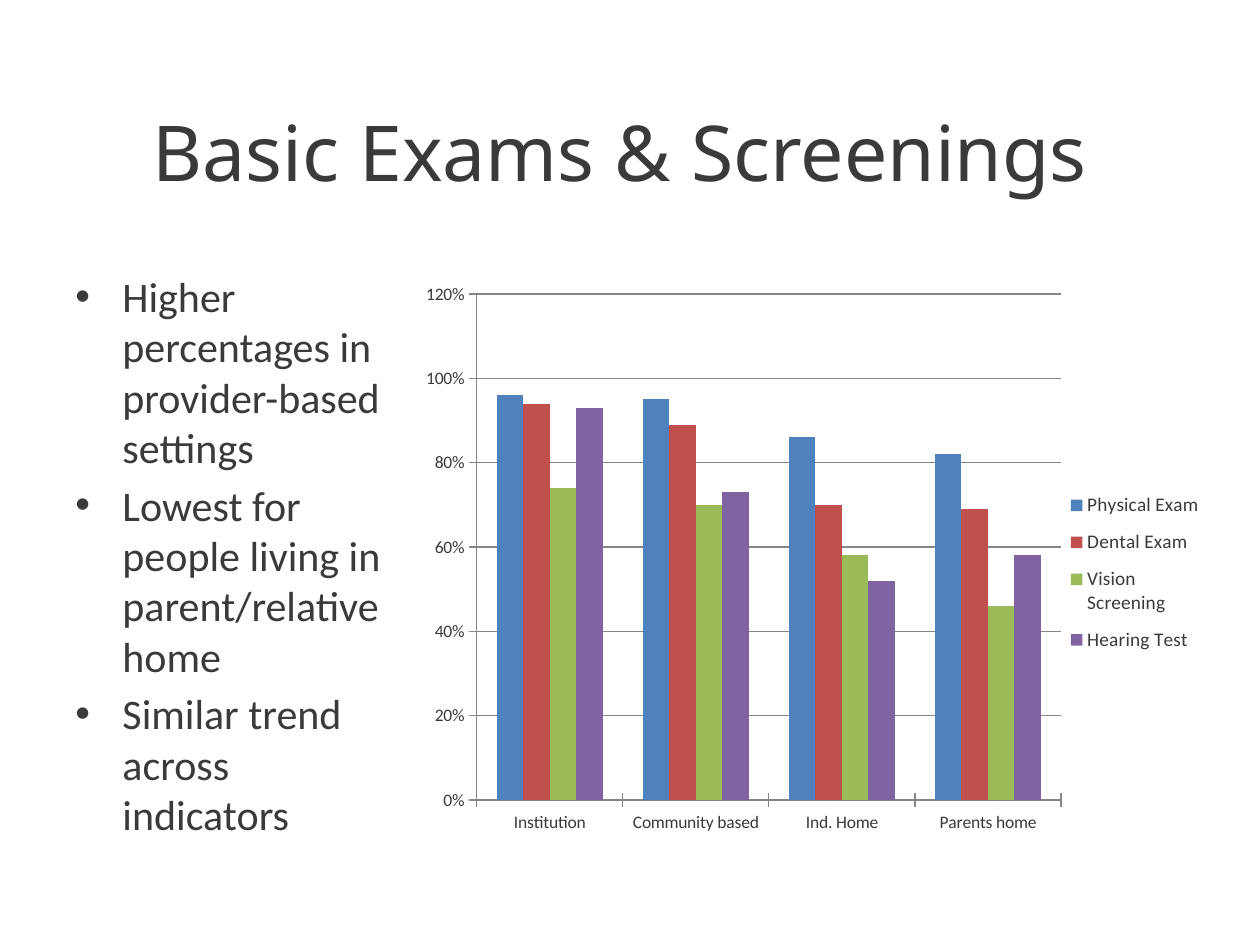
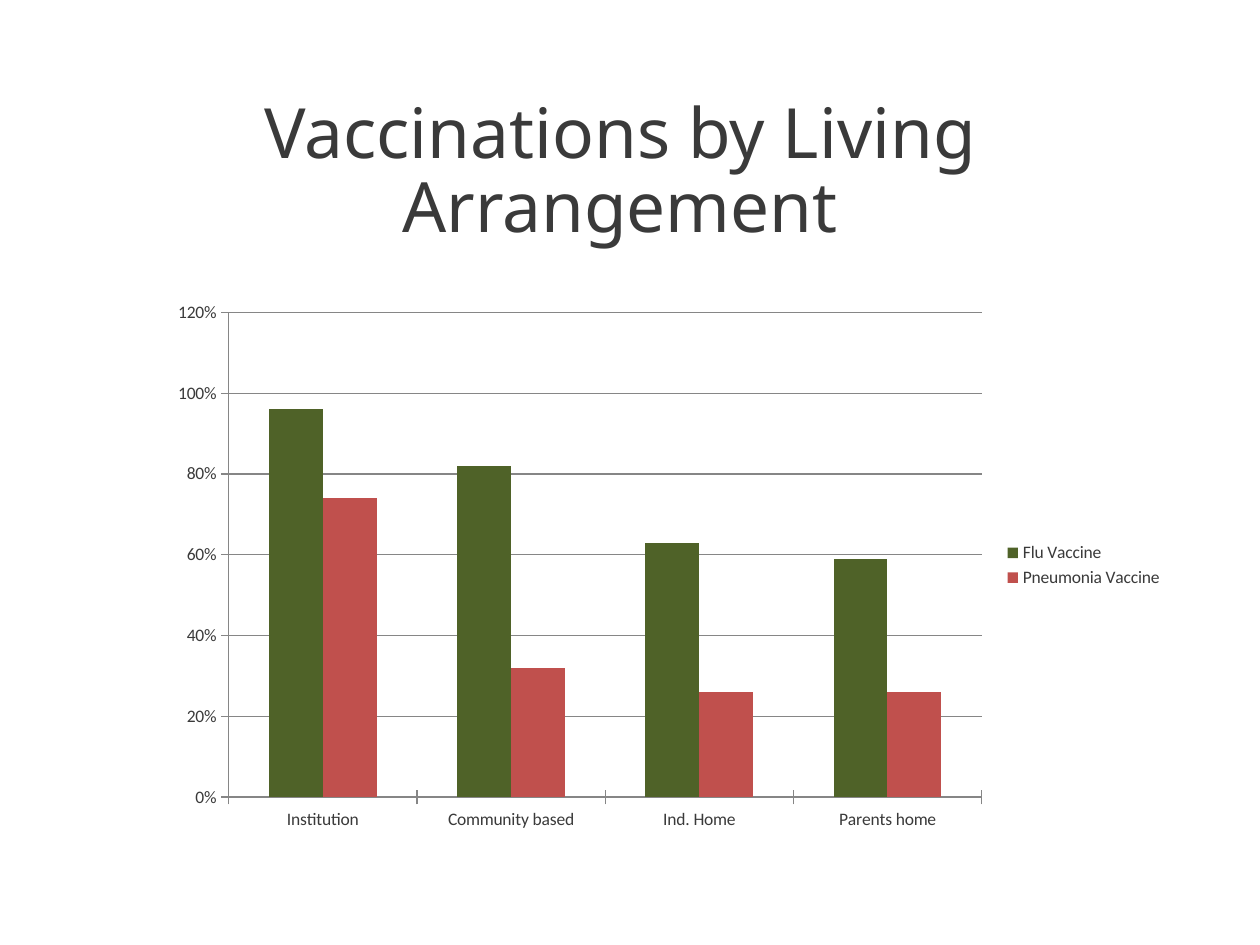
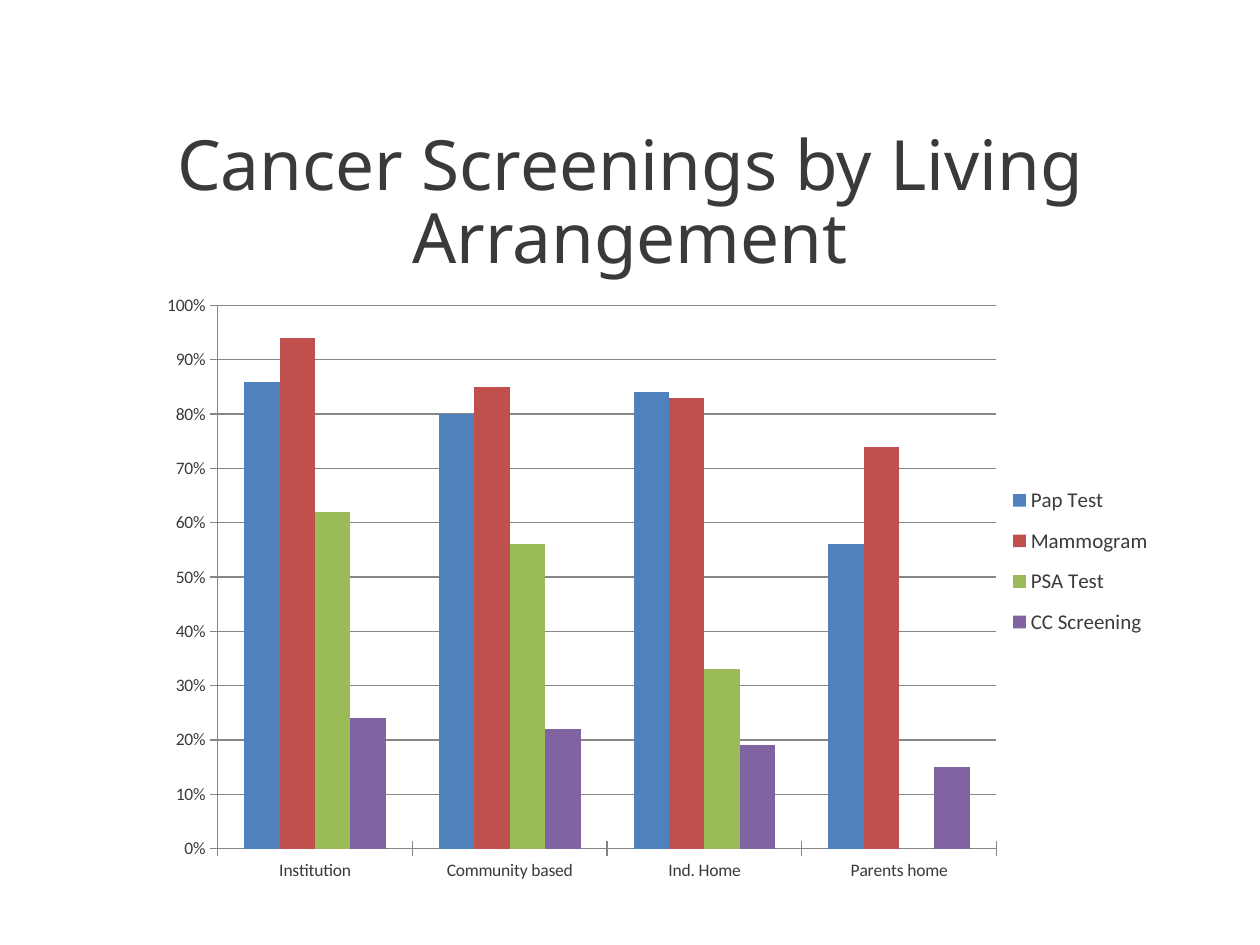
from lxml import etree
from pptx import Presentation
from pptx.chart.data import CategoryChartData
from pptx.dml.color import RGBColor
from pptx.enum.chart import XL_CHART_TYPE, XL_LEGEND_POSITION, XL_TICK_MARK
from pptx.enum.text import MSO_ANCHOR, PP_ALIGN
from pptx.oxml.ns import qn
from pptx.util import Cm, Pt

COLUMN = XL_CHART_TYPE.COLUMN_CLUSTERED
RIGHT = XL_LEGEND_POSITION.RIGHT
CROSS = XL_TICK_MARK.CROSS
MIDDLE = MSO_ANCHOR.MIDDLE
CENTER = PP_ALIGN.CENTER

COLORS = {
    "text": "3A3A3A",
    "line": "868686",
    "blue": "4F81BD",
    "red": "C0504D",
    "green": "9BBB59",
    "olive": "4F6228",
    "purple": "8064A2",
}
HEAD_FONT = "Noto Sans"
BODY_FONT = "Calibri"
HOMES = ["Institution", "Community based", "Ind. Home", "Parents home"]

SLIDES = [
    {
        "title": "Basic Exams & Screenings",
        "head": (1.07, 1.7, 22.86, 2.69),
        "size": 44,
        "spacing": 1.0,
        "points": [
            "Higher percentages in provider-based settings",
            "Lowest for people living in parent/relative home",
            "Similar trend across indicators",
        ],
        "chart": (8.26, 5.51, 16.51, 11.51),
        "plot": (9.61, 5.93, 11.78, 10.2),
        "legend": (21.49, 9.68, 2.78, 3.73),
        "key": 11,
        "top": 1.2,
        "step": 0.2,
        "series": [
            ("Physical Exam", "blue", [0.96, 0.95, 0.86, 0.82]),
            ("Dental Exam", "red", [0.94, 0.89, 0.7, 0.69]),
            ("Vision Screening", "green", [0.74, 0.7, 0.58, 0.46]),
            ("Hearing Test", "purple", [0.93, 0.73, 0.52, 0.58]),
        ],
    },
    {
        "title": "Vaccinations by Living Arrangement",
        "head": (1.07, 1.91, 22.86, 3.18),
        "size": 39.6,
        "spacing": 0.88,
        "points": [],
        "chart": (3.18, 5.87, 20.52, 11.05),
        "plot": (4.61, 6.3, 15.18, 9.77),
        "legend": None,
        "key": 10,
        "top": 1.2,
        "step": 0.2,
        "series": [
            ("Flu Vaccine", "olive", [0.96, 0.82, 0.63, 0.59]),
            ("Pneumonia Vaccine", "red", [0.74, 0.32, 0.26, 0.26]),
        ],
    },
    {
        "title": "Cancer Screenings by Living Arrangement",
        "head": (1.27, 2.54, 22.86, 3.18),
        "size": 39.6,
        "spacing": 0.88,
        "points": [],
        "chart": (2.97, 5.72, 20.75, 12.27),
        "plot": (4.39, 6.16, 15.7, 10.95),
        "legend": (20.32, 9.52, 2.92, 3.59),
        "key": 12,
        "top": 1.0,
        "step": 0.1,
        "series": [
            ("Pap Test", "blue", [0.86, 0.8, 0.84, 0.56]),
            ("Mammogram", "red", [0.94, 0.85, 0.83, 0.74]),
            ("PSA Test", "green", [0.62, 0.56, 0.33, None]),
            ("CC Screening", "purple", [0.24, 0.22, 0.19, 0.15]),
        ],
    },
]
BODY = (1.27, 5.33, 6.99, 12.32)


def color(name):
    return RGBColor.from_string(COLORS[name])


def style(font, face, size):
    font.name = face
    font.size = Pt(size)
    font.color.rgb = color("text")


def add_box(slide, area):
    frame = slide.shapes.add_textbox(*map(Cm, area)).text_frame
    frame.word_wrap = True
    return frame


def add_title(slide, data):
    frame = add_box(slide, data["head"])
    frame.vertical_anchor = MIDDLE
    frame.text = data["title"]
    para = frame.paragraphs[0]
    para.alignment = CENTER
    para.line_spacing = data["spacing"]
    style(para.runs[0].font, HEAD_FONT, data["size"])


def add_points(slide, points):
    frame = add_box(slide, BODY)
    frame.text = "\n".join(points)
    for i, para in enumerate(frame.paragraphs):
        props = para._p.get_or_add_pPr()
        props.set("marL", str(Cm(0.95)))
        props.set("indent", str(-Cm(0.95)))
        etree.SubElement(props, qn("a:buFont")).set("typeface", "Arial")
        etree.SubElement(props, qn("a:buChar")).set("char", "•")
        if i:
            para.space_before = Pt(4)
        style(para.runs[0].font, BODY_FONT, 24)


def make_layout(area, outer, inner):
    left, top, width, height = outer
    x, y, w, h = area
    layout = etree.Element(qn("c:layout"))
    manual = etree.SubElement(layout, qn("c:manualLayout"))
    parts = [("layoutTarget", "inner")] if inner else []
    parts += [("xMode", "edge"), ("yMode", "edge")]
    parts += [("x", (x - left) / width), ("y", (y - top) / height)]
    parts += [("w", w / width), ("h", h / height)]
    for tag, val in parts:
        etree.SubElement(manual, qn("c:" + tag)).set("val", str(val))
    return layout


def place(node, layout, before):
    for old in node.findall(qn("c:layout")):
        node.remove(old)
    node.find(qn(before)).addprevious(layout)


def add_chart(slide, data):
    source = CategoryChartData(number_format="0%")
    source.categories = HOMES
    for name, _, vals in data["series"]:
        source.add_series(name, vals)
    area = data["chart"]
    chart = slide.shapes.add_chart(COLUMN, *map(Cm, area), source).chart
    chart.has_title = False
    style(chart.font, BODY_FONT, 10)

    plot = chart.plots[0]
    plot.gap_width = 150
    plot.overlap = 0
    plot.vary_by_categories = False
    for series, (_, tint, _) in zip(plot.series, data["series"]):
        series.invert_if_negative = False
        series.format.fill.solid()
        series.format.fill.fore_color.rgb = color(tint)

    scale = chart.value_axis
    scale.minimum_scale = 0
    scale.maximum_scale = data["top"]
    scale.major_unit = data["step"]
    scale.has_major_gridlines = True
    scale.tick_labels.number_format = "0%"
    scale.tick_labels.number_format_is_linked = False
    for axis in (chart.category_axis, scale):
        axis.major_tick_mark = CROSS
    for item in (chart.category_axis, scale, scale.major_gridlines):
        item.format.line.color.rgb = color("line")
        item.format.line.width = Pt(0.75)

    chart.has_legend = True
    legend = chart.legend
    legend.position = RIGHT
    legend.include_in_layout = False
    style(legend.font, BODY_FONT, data["key"])

    grid = make_layout(data["plot"], area, True)
    place(plot._element.getparent(), grid, "c:barChart")
    if data["legend"]:
        spot = make_layout(data["legend"], area, False)
        place(legend._element, spot, "c:overlay")


def main():
    deck = Presentation()
    deck.slide_width, deck.slide_height = Cm(25.4), Cm(19.05)
    for data in SLIDES:
        slide = deck.slides.add_slide(deck.slide_layouts[6])
        add_title(slide, data)
        if data["points"]:
            add_points(slide, data["points"])
        add_chart(slide, data)
    deck.save("out.pptx")


if __name__ == "__main__":
    main()
